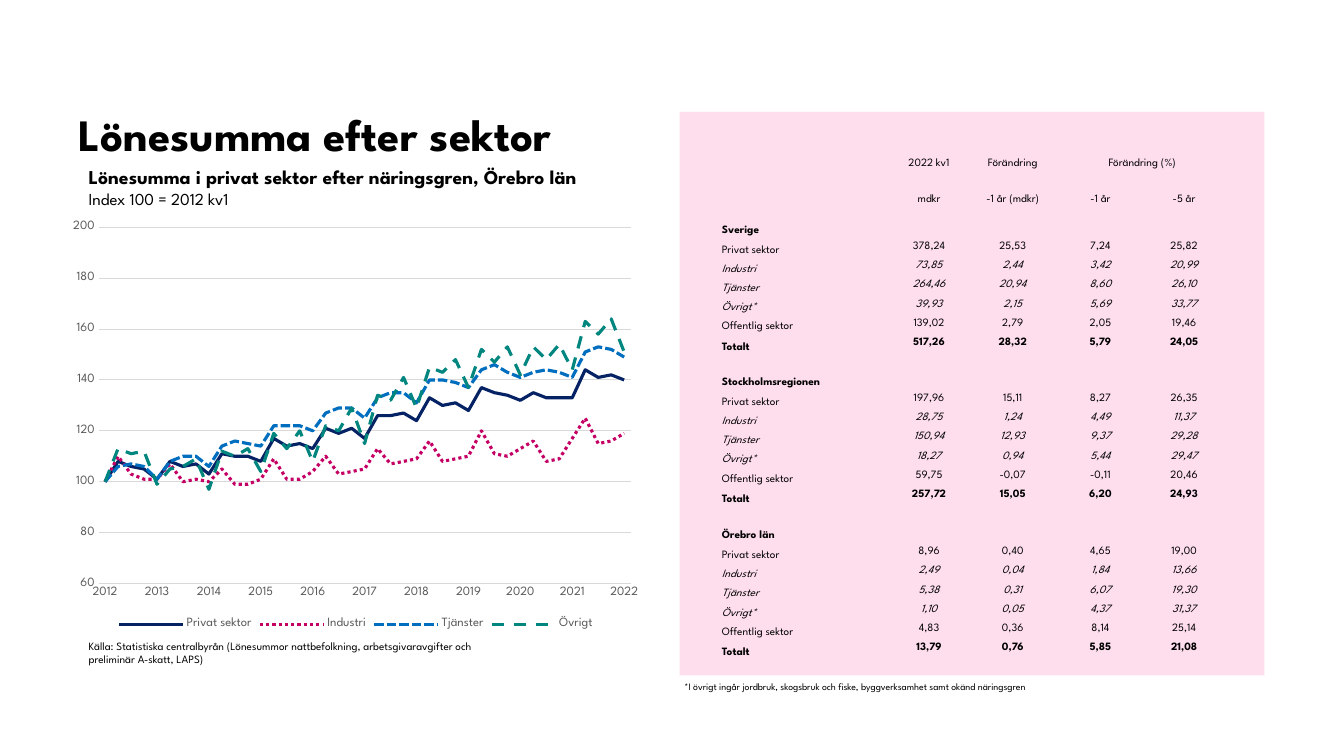
"""Build a slide on payroll by sector: a line chart beside a regional table."""
from dataclasses import dataclass

from lxml.etree import SubElement
from pptx import Presentation
from pptx.chart.chart import Chart
from pptx.chart.data import CategoryChartData
from pptx.dml.color import RGBColor
from pptx.enum.chart import XL_CHART_TYPE, XL_LEGEND_POSITION, XL_TICK_MARK
from pptx.enum.dml import MSO_LINE_DASH_STYLE as Dash
from pptx.enum.shapes import MSO_SHAPE
from pptx.enum.text import MSO_ANCHOR as Anchor, PP_ALIGN as Align
from pptx.oxml.ns import qn
from pptx.slide import Slide
from pptx.table import Table, _Cell as Cell
from pptx.text.text import Font
from pptx.util import Inches, Pt

FONT = "League Spartan"
BLACK, GREY, RULE, PINK = "000000", "595959", "D9D9D9", "FEDEED"
NO_GRID_STYLE = "{2D5ABB26-0587-4C30-8999-92F81FD0307C}"
COLUMN_WIDTHS = (1.69, 0.75, 0.91, 0.83, 0.83)
HEADER_HEIGHTS = (0.31, 0.35)
SECTOR_HEIGHTS = (0.2, 0.19, 0.19, 0.19, 0.19, 0.2)
HEADERS = (
    ("", "2022 kv1", "Förändring", "Förändring (%)", ""),
    ("", "mdkr", "-1 år (mdkr)", "-1 år", "-5 år"),
)
SECTORS = ("Privat sektor", "Industri", "Tjänster", "Övrigt*", "Offentlig sektor", "Totalt")
SUBSECTORS = SECTORS[1:4]


@dataclass
class Span:
    text: str
    size: float
    bold: bool = False


@dataclass
class TextBlock:
    left: float
    top: float
    width: float
    height: float
    lines: tuple[Span, ...]
    inset: tuple[float, float] = (0.1, 0.05)
    anchor: Anchor = Anchor.TOP


@dataclass
class Region:
    name: str
    heading_height: float
    rows: tuple[str, ...]


@dataclass
class Series:
    name: str
    color: str
    dash: Dash
    values: tuple[int, ...]


TEXTS = (
    TextBlock(0.78, 0.37, 9.22, 1.22, (Span("Lönesumma efter sektor", 32, True),),
              (0, 0), Anchor.BOTTOM),
    TextBlock(0.78, 1.59, 5.8, 0.54, (
        Span("Lönesumma i privat sektor efter näringsgren, Örebro län", 14, True),
        Span("Index 100 = 2012 kv1", 12))),
    TextBlock(0.78, 6.29, 4.41, 0.37, (
        Span("Källa: Statistiska centralbyrån (Lönesummor nattbefolkning, "
             "arbetsgivaravgifter och preliminär A-skatt, LAPS)", 8),)),
    TextBlock(6.69, 6.7, 4.51, 0.34, (
        Span("*I övrigt ingår jordbruk, skogsbruk och fiske, byggverksamhet "
             "samt okänd näringsgren", 7),)),
)
REGIONS = (
    Region("Sverige", 0.31, (
        "378,24 25,53 7,24 25,82", "73,85 2,44 3,42 20,99", "264,46 20,94 8,60 26,10",
        "39,93 2,15 5,69 33,77", "139,02 2,79 2,05 19,46", "517,26 28,32 5,79 24,05")),
    Region("Stockholmsregionen", 0.35, (
        "197,96 15,11 8,27 26,35", "28,75 1,24 4,49 11,37", "150,94 12,93 9,37 29,28",
        "18,27 0,94 5,44 29,47", "59,75 -0,07 -0,11 20,46", "257,72 15,05 6,20 24,93")),
    Region("Örebro län", 0.36, (
        "8,96 0,40 4,65 19,00", "2,49 0,04 1,84 13,66", "5,38 0,31 6,07 19,30",
        "1,10 0,05 4,37 31,37", "4,83 0,36 8,14 25,14", "13,79 0,76 5,85 21,08")),
)
SERIES = (
    Series("Privat sektor", "052364", Dash.SOLID, (
        100, 108, 106, 105, 101, 108, 106, 107, 103, 111, 110, 110, 108, 117, 114, 115, 113, 121,
        119, 121, 117, 126, 126, 127, 124, 133, 130, 131, 128, 137, 135, 134, 132, 135, 133, 133,
        133, 144, 141, 142, 140)),
    Series("Industri", "C40064", Dash.ROUND_DOT, (
        100, 110, 103, 101, 101, 107, 100, 101, 100, 105, 99, 99, 101, 109, 101, 101, 104, 110,
        103, 104, 105, 113, 107, 108, 109, 116, 108, 109, 110, 120, 111, 110, 113, 116, 108, 109,
        117, 125, 115, 116, 119)),
    Series("Tjänster", "006EBF", Dash.SQUARE_DOT, (
        100, 106, 107, 106, 101, 108, 110, 110, 106, 114, 116, 115, 114, 122, 122, 122, 120, 127,
        129, 129, 125, 133, 135, 135, 131, 140, 140, 139, 137, 144, 146, 143, 141, 143, 144, 143,
        141, 151, 153, 152, 149)),
    Series("Övrigt", "00867F", Dash.DASH, (
        100, 113, 111, 112, 99, 105, 106, 109, 97, 112, 110, 113, 104, 119, 113, 120, 108, 122,
        120, 129, 115, 134, 132, 141, 129, 145, 143, 148, 137, 152, 147, 153, 142, 153, 148, 154,
        144, 163, 158, 164, 151)),
)


def rgb(color: str) -> RGBColor:
    return RGBColor.from_string(color)


def style_font(font: Font, size: float, color: str = BLACK,
               bold: bool = False, italic: bool = False) -> None:
    font.name, font.size, font.bold, font.italic = FONT, Pt(size), bold, italic
    font.color.rgb = rgb(color)


def add_text(page: Slide, block: TextBlock) -> None:
    box = page.shapes.add_textbox(*map(Inches, (block.left, block.top, block.width, block.height)))
    frame = box.text_frame
    frame.word_wrap, frame.vertical_anchor = True, block.anchor
    frame.margin_left = frame.margin_right = Inches(block.inset[0])
    frame.margin_top = frame.margin_bottom = Inches(block.inset[1])
    para = frame.paragraphs[0]
    for index, line in enumerate(block.lines):
        if index:
            para.add_line_break()
        span = para.add_run()
        span.text = line.text
        style_font(span.font, line.size, bold=line.bold)


def fill_cell(cell: Cell, text: str, align: Align, anchor: Anchor, bold: bool, italic: bool) -> None:
    cell.fill.background()
    cell.margin_left = cell.margin_right = cell.margin_top = Inches(0.01)
    cell.margin_bottom = 0
    cell.vertical_anchor = anchor
    para = cell.text_frame.paragraphs[0]
    para.alignment = align
    if text:
        span = para.add_run()
        span.text = text
        style_font(span.font, 8, bold=bold, italic=italic)
    else:
        SubElement(para._p, qn("a:endParaRPr"), sz="800")


def fill_row(table: Table, row: int, height: float, texts: tuple[str, ...],
             anchor: Anchor = Anchor.MIDDLE, bold: bool = False, italic: bool = False) -> None:
    table.rows[row].height = Inches(height)
    for column, text in enumerate(texts):
        align = Align.CENTER if column else Align.LEFT
        fill_cell(table.cell(row, column), text, align, anchor if column else Anchor.BOTTOM,
                  bold, italic)


def add_region_table(page: Slide) -> None:
    row_count = len(HEADERS) + len(REGIONS) * (1 + len(SECTORS))
    table = page.shapes.add_table(row_count, len(COLUMN_WIDTHS), Inches(7.15), Inches(1.37),
                                  Inches(sum(COLUMN_WIDTHS)), Inches(5.15)).table
    table.first_row = table.horz_banding = False
    table._tbl.tblPr.find(qn("a:tableStyleId")).text = NO_GRID_STYLE
    for column, width in zip(table.columns, COLUMN_WIDTHS):
        column.width = Inches(width)
    for row, (height, texts) in enumerate(zip(HEADER_HEIGHTS, HEADERS)):
        fill_row(table, row, height, texts, Anchor.BOTTOM)
    table.cell(0, 3).merge(table.cell(0, 4))
    row = len(HEADERS)
    for region in REGIONS:
        fill_row(table, row, region.heading_height, (region.name, "", "", "", ""), bold=True)
        for row, (sector, height, values) in enumerate(
                zip(SECTORS, SECTOR_HEIGHTS, region.rows), row + 1):
            fill_row(table, row, height, (sector, *values.split()),
                     bold=sector == "Totalt", italic=sector in SUBSECTORS)
        row += 1


def place_plot(chart: Chart) -> None:
    area = chart._chartSpace.chart.plotArea
    for old in area.findall(qn("c:layout")):
        area.remove(old)
    layout = SubElement(area, qn("c:layout"))
    area.insert(0, layout)
    manual = SubElement(layout, qn("c:manualLayout"))
    for tag, value in (("layoutTarget", "inner"), ("xMode", "edge"), ("yMode", "edge"),
                       ("x", "0.06"), ("y", "0.03"), ("w", "0.91"), ("h", "0.85")):
        SubElement(manual, qn(f"c:{tag}"), val=value)


def add_index_chart(page: Slide) -> None:
    data = CategoryChartData(number_format="0")
    data.categories = ["" if quarter % 4 else str(2012 + quarter // 4) for quarter in range(41)]
    for series in SERIES:
        data.add_series(series.name, series.values)
    chart = page.shapes.add_chart(XL_CHART_TYPE.LINE, Inches(0.63), Inches(2.13),
                                  Inches(5.8), Inches(4.16), data).chart
    style_font(chart.font, 10)
    chart.has_title = False
    chart.has_legend = True
    chart.legend.position = XL_LEGEND_POSITION.BOTTOM
    chart.legend.include_in_layout = False
    style_font(chart.legend.font, 9, GREY)
    chart.plots[0].vary_by_categories = False
    for drawn, series in zip(chart.plots[0].series, SERIES):
        drawn.smooth = False
        line = drawn.format.line
        line.color.rgb, line.width, line.dash_style = rgb(series.color), Pt(2.25), series.dash
    years, index = chart.category_axis, chart.value_axis
    for axis in (years, index):
        axis.major_tick_mark = axis.minor_tick_mark = XL_TICK_MARK.NONE
        style_font(axis.tick_labels.font, 9, GREY)
    index.minimum_scale, index.maximum_scale, index.major_unit = 60, 200, 20
    index.format.line.fill.background()
    for line in (years.format.line, index.major_gridlines.format.line):
        line.color.rgb, line.width = rgb(RULE), Pt(0.75)
    skip = SubElement(years._element, qn("c:tickLblSkip"), val="4")
    years._element.find(qn("c:noMultiLvlLbl")).addprevious(skip)
    place_plot(chart)


def main() -> None:
    deck = Presentation()
    deck.slide_width, deck.slide_height = Inches(13.33), Inches(7.5)
    page = deck.slides.add_slide(deck.slide_layouts[6])
    panel = page.shapes.add_shape(MSO_SHAPE.RECTANGLE, *map(Inches, (6.74, 1.11, 5.8, 5.59)))
    panel.shadow.inherit = False
    panel.fill.solid()
    panel.fill.fore_color.rgb = rgb(PINK)
    panel.line.fill.background()
    for block in TEXTS:
        add_text(page, block)
    add_region_table(page)
    add_index_chart(page)
    deck.save("out.pptx")


if __name__ == "__main__":
    main()
